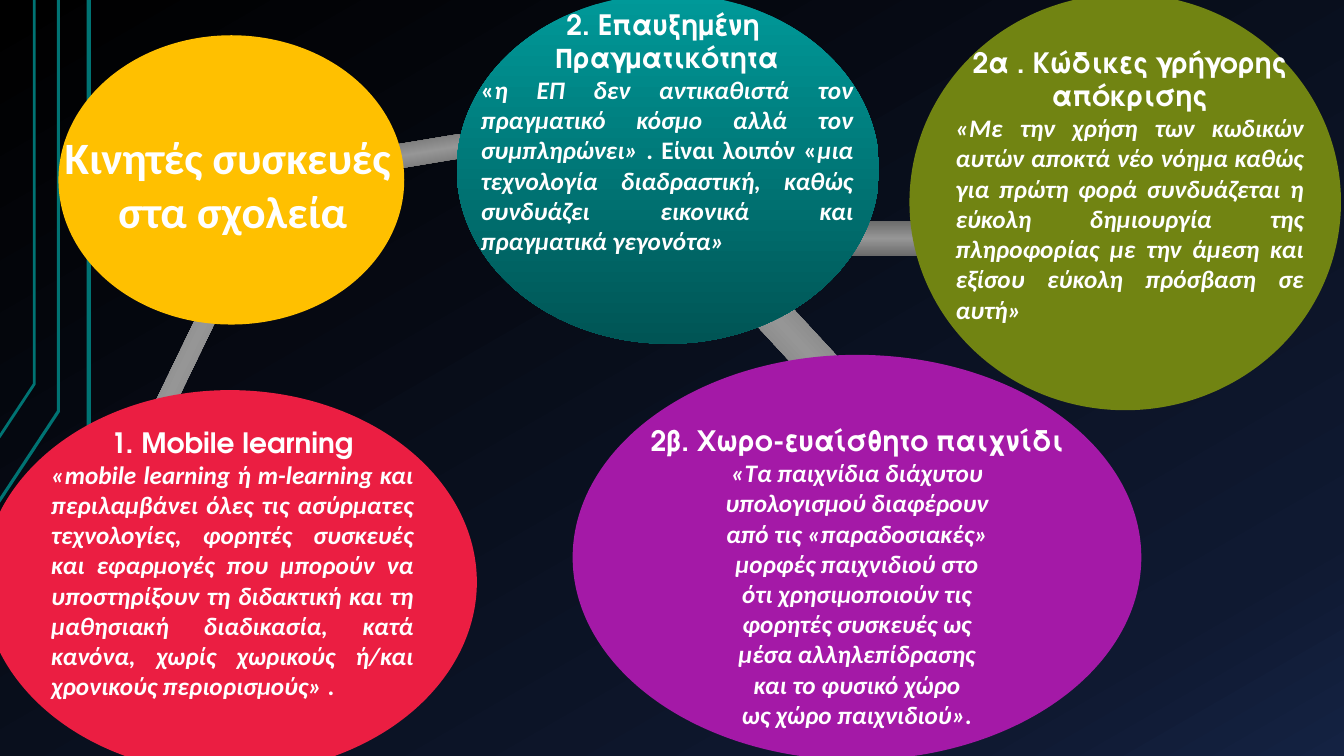
"""Build a slide of linked bubbles about mobile devices in schools."""
from lxml.etree import SubElement
from pptx import Presentation
from pptx.dml.color import RGBColor
from pptx.enum.shapes import MSO_SHAPE as Preset
from pptx.enum.text import MSO_ANCHOR as Anchor, PP_ALIGN as Align
from pptx.oxml.ns import qn
from pptx.util import Inches, Pt

COLORS = {
    "white": "FFFFFF", "track": "007373", "yellow": "FFC000",
    "olive": "718412", "red": "EB1E42", "purple": "A419A7",
}
GRADIENTS = {
    "night": [(0, "000000"), (85, "0F1931"), (100, "142242")],
    "rod": [(0, "6B6B6B"), (50, "969696"), (100, "6B6B6B")],
    "teal": [(0, "009999"), (100, "005555")],
}
HEAD_FONT, BODY_FONT = "TeX Gyre Adventor", "Calibri"

TRACKS = [
    (3, [(-0.01, 5.72), (0.88, 4.35), (0.88, 0)]),
    (2.25, [(-0.02, 4.99), (0.58, 4.08), (0.58, 0)]),
    (2, [(-0.01, 4.34), (0.34, 3.81), (0.34, 0)]),
]
RODS = [
    ((7.37, 3.36, 1.38, 0.38), 227.2),
    ((8.36, 2.19, 1.03, 0.35), 180),
    ((0.91, 3.5, 1.85, 0.19), 295.8),
    ((3.94, 1.38, 0.64, 0.24), 350.6),
]
TOPIC = ["Κινητές συσκευές ", "στα σχολεία"]
BUBBLES = [
    {
        "fill": "olive", "at": (9.02, -0.06, 4.28, 4.13),
        "text_at": (9.38, 0.4, 3.65, 3.23),
        "head": ["2α . Κώδικες γρήγορης απόκρισης"],
        "body": [("«Με την χρήση των κωδικών αυτών αποκτά νέο νόημα καθώς για πρώτη "
                  "φορά συνδυάζεται η εύκολη δημιουργία της πληροφορίας με την άμεση "
                  "και εξίσου εύκολη πρόσβαση σε αυτή»", True)],
    },
    {
        "fill": "red", "at": (-0.17, 3.87, 4.9, 3.81),
        "text_at": (0.41, 4.17, 3.79, 3.2),
        "head": ["1. Mobile learning"],
        "body": [("«mobile learning ή m-learning και περιλαμβάνει όλες τις ασύρματες "
                  "τεχνολογίες, φορητές συσκευές και εφαρμογές που μπορούν να "
                  "υποστηρίξουν τη διδακτική και τη μαθησιακή διαδικασία, κατά κανόνα, "
                  "χωρίς χωρικούς ή/και χρονικούς περιορισμούς» ", True), (".", False)],
    },
    {
        "fill": "teal", "at": (4.53, -0.06, 4.19, 3.47),
        "text_at": (4.67, 0.02, 3.89, 2.59),
        "head": ["2. Επαυξημένη ", "Πραγματικότητα"],
        "body": [("«", False),
                 ("η ΕΠ δεν αντικαθιστά τον πραγματικό κόσμο αλλά τον συμπληρώνει»", True),
                 (" . Είναι λοιπόν «", False),
                 ("μια τεχνολογία διαδραστική, καθώς συνδυάζει εικονικά και "
                  "πραγματικά γεγονότα»", True)],
    },
]
GAME_HEAD = "2β. Χωρο-ευαίσθητο παιχνίδι"
GAME_LINES = [
    "«Τα παιχνίδια διάχυτου", "υπολογισμού διαφέρουν", "από τις «παραδοσιακές»",
    "μορφές παιχνιδιού στο", "ότι χρησιμοποιούν τις", "φορητές συσκευές ως",
    "μέσα αλληλεπίδρασης", "και το φυσικό χώρο", "ως χώρο παιχνιδιού».",
]


def rgb(name):
    return RGBColor.from_string(COLORS[name])


def inches(values):
    return [Inches(value) for value in values]


def paint_gradient(fill, element, name, angle):
    fill.gradient()
    fill.gradient_angle = 360 - angle
    stops = element.find(".//" + qn("a:gsLst"))
    for stop in list(stops):
        stops.remove(stop)
    for position, color in GRADIENTS[name]:
        stop = SubElement(stops, qn("a:gs"), pos=str(position * 1000))
        SubElement(stop, qn("a:srgbClr"), val=color)


def add_filled(page, preset, at, fill, rotation=0):
    shape = page.shapes.add_shape(preset, *inches(at))
    shape.shadow.inherit = False
    shape.rotation = rotation
    shape.line.fill.background()
    if fill in GRADIENTS:
        paint_gradient(shape.fill, shape._element, fill, 90)
    else:
        shape.fill.solid()
        shape.fill.fore_color.rgb = rgb(fill)
    return shape


def add_box(page, at):
    frame = page.shapes.add_textbox(*inches(at)).text_frame
    frame.word_wrap = True
    return frame


def add_para(frame, spans, size=18, font=BODY_FONT, align=Align.CENTER):
    para = frame.paragraphs[0]
    if para.runs:
        para = frame.add_paragraph()
    para.alignment = align
    for text, italic in spans:
        span = para.add_run()
        span.text = text
        span.font.size, span.font.name = Pt(size), font
        span.font.bold, span.font.italic = True, italic
        span.font.color.rgb = rgb("white")


def main():
    deck = Presentation()
    deck.slide_width, deck.slide_height = Inches(13.33), Inches(7.5)
    page = deck.slides.add_slide(deck.slide_layouts[6])
    paint_gradient(page.background.fill, page._element, "night", 60)

    for width, points in TRACKS:
        start, *rest = [tuple(inches(point)) for point in points]
        builder = page.shapes.build_freeform(*start)
        builder.add_line_segments(rest, close=False)
        track = builder.convert_to_shape()
        track.shadow.inherit = False
        track.fill.background()
        track.line.color.rgb = rgb("track")
        track.line.width = Pt(width)

    for at, rotation in RODS:
        add_filled(page, Preset.RECTANGLE, at, "rod", rotation)

    add_filled(page, Preset.OVAL, (0.58, 0.35, 3.43, 2.87), "yellow")
    topic_box = add_box(page, (0.4, 1.24, 3.82, 1.18))
    for line in TOPIC:
        add_para(topic_box, [(line, False)], size=32)

    for bubble in BUBBLES:
        add_filled(page, Preset.OVAL, bubble["at"], bubble["fill"])
        box = add_box(page, bubble["text_at"])
        for line in bubble["head"]:
            add_para(box, [(line, False)], size=20, font=HEAD_FONT)
        add_para(box, bubble["body"], align=Align.JUSTIFY)

    game = add_filled(page, Preset.OVAL, (5.68, 3.52, 5.64, 4.02), "purple").text_frame
    game.word_wrap = False
    game.vertical_anchor = Anchor.MIDDLE
    game.margin_top = Inches(0.43)
    add_para(game, [(GAME_HEAD, False)], size=20, font=HEAD_FONT)
    for line in GAME_LINES:
        add_para(game, [(line, True)])

    deck.save("out.pptx")


if __name__ == "__main__":
    main()
